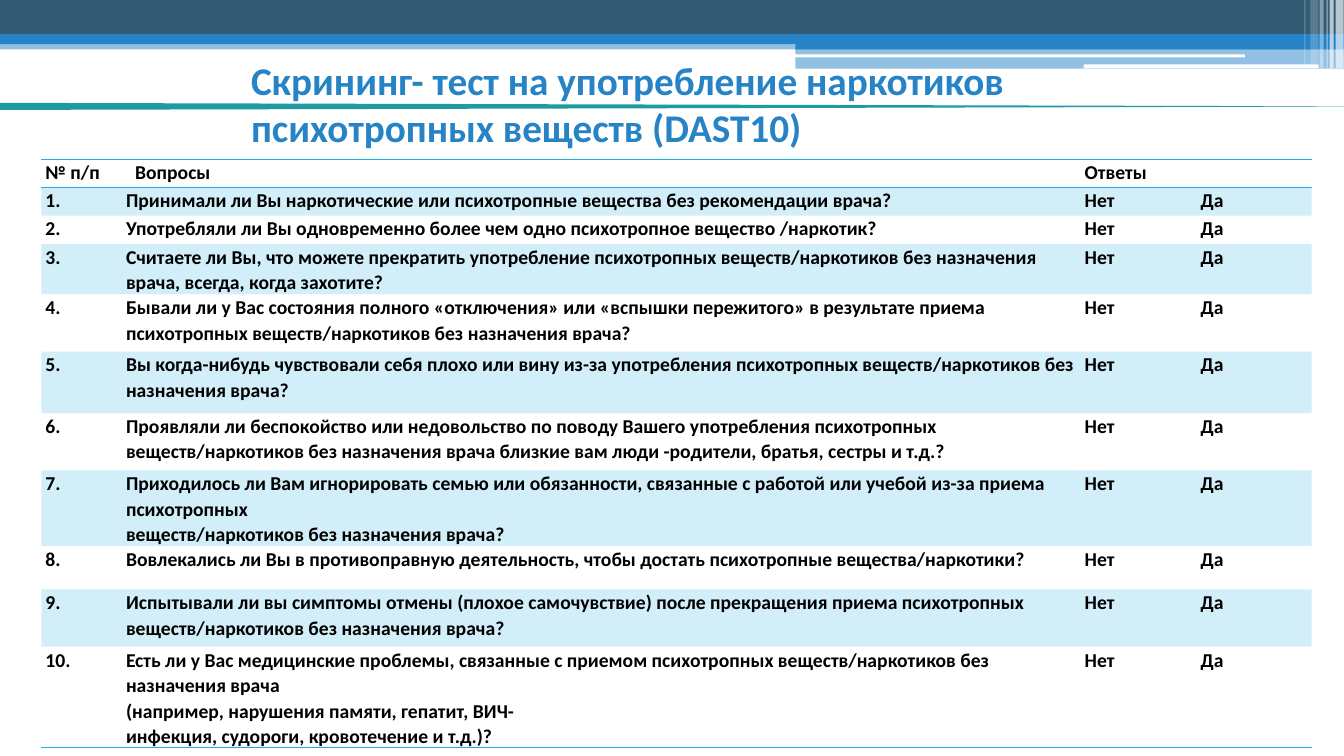
import pptx
import pptx.util
import pptx.dml.color
import pptx.enum.shapes
import pptx.enum.text
import pptx.oxml.ns
import lxml.etree

RGBColor = pptx.dml.color.RGBColor
SHAPE = pptx.enum.shapes.MSO_SHAPE
BLUE = RGBColor(0x26, 0x83, 0xC6)
SLATE = RGBColor(0x33, 0x5B, 0x74)
TEAL = RGBColor(0x1D, 0x9B, 0xA1)
CYAN = RGBColor(0x1C, 0xAD, 0xE4)
WHITE = RGBColor(0xFF, 0xFF, 0xFF)
BLACK = RGBColor(0, 0, 0)
NO_TABLE_STYLE = "{2D5ABB26-0587-4C30-8999-92F81FD0307C}"

QUESTIONS = [
    "Принимали ли Вы наркотические или психотропные вещества без рекомендации врача?",
    "Употребляли ли Вы одновременно более чем одно психотропное вещество /наркотик?",
    "Считаете ли Вы, что можете прекратить употребление психотропных веществ/наркотиков "
    "без назначения врача, всегда, когда захотите?",
    "Бывали ли у Вас состояния полного «отключения» или «вспышки пережитого» в результате "
    "приема психотропных веществ/наркотиков без назначения врача?",
    "Вы когда-нибудь чувствовали себя плохо или вину из-за употребления психотропных "
    "веществ/наркотиков без назначения врача?",
    "Проявляли ли беспокойство или недовольство по поводу Вашего употребления психотропных "
    "веществ/наркотиков без назначения врача близкие вам люди -родители, братья, сестры и т.д.?",
    "Приходилось ли Вам игнорировать семью или обязанности, связанные с работой или учебой "
    "из-за приема психотропных\nвеществ/наркотиков без назначения врача?",
    "Вовлекались ли Вы в противоправную деятельность, чтобы достать психотропные "
    "вещества/наркотики?",
    "Испытывали ли вы симптомы отмены (плохое самочувствие) после прекращения приема "
    "психотропных веществ/наркотиков без назначения врача?",
    "Есть ли у Вас медицинские проблемы, связанные с приемом психотропных "
    "веществ/наркотиков без назначения врача\n(например, нарушения памяти, гепатит, ВИЧ-\n"
    "инфекция, судороги, кровотечение и т.д.)?",
]
# Lengths below are percentages of the slide's width (x) and height (y).
COLUMNS = [6, 71.33, 8.63, 8.55]
ROWS = [3.73, 3.73, 3.73, 5.73, 7.6, 8.13, 7.6, 7.6, 5.73, 7.6, 9.47]

# left, top, width, height, colour, opacity
BANDS = [
    (0, 5.33, 100, 1.2, BLUE, 50),
    (0, 0, 100, 4.53, SLATE, 100),
    (0, 4.53, 100, 1.33, BLUE, 100),
    (59.18, 5.2, 40.82, 1.33, BLUE, 100),
    (59.18, 6.4, 40.82, 2.67, BLUE, 50),
]
# left, top, width, height
SLITS = [(59.1, 7.2, 33.53, 0.4), (80.63, 8.53, 17.48, 0.53)]
# left, width, height, opacity
STRIPES = [
    (99.38, 0.6, 9.07, 65),
    (98.93, 0.3, 9.07, 65),
    (98.7, 0.08, 9.07, 60),
    (98.18, 0.3, 9.07, 40),
    (97.5, 0.6, 8.53, 20),
    (97.05, 0.08, 8.53, 30),
]


def write(tf, text, size=14, color=BLACK, bold=True, spacing=1.0):
    """Fill a text frame, one paragraph per line of text."""
    for i, line in enumerate(text.split("\n")):
        p = tf.paragraphs[0] if i == 0 else tf.add_paragraph()
        p.line_spacing = spacing
        r = p.add_run()
        r.text = line
        r.font.name = "Calibri"
        r.font.size = pptx.util.Pt(size)
        r.font.bold = bold
        r.font.color.rgb = color


def paint(fill, color, opacity=100):
    fill.solid()
    fill.fore_color.rgb = color
    if opacity < 100:
        clr = fill._xPr.find(".//" + pptx.oxml.ns.qn("a:srgbClr"))
        alpha = lxml.etree.SubElement(clr, pptx.oxml.ns.qn("a:alpha"))
        alpha.set("val", str(opacity * 1000))


def border(cell, side, color, width=1):
    """Draw one cell edge; side is T or B, and B must come before T."""
    ln = lxml.etree.Element(pptx.oxml.ns.qn("a:ln" + side), w=str(pptx.util.Pt(width)))
    fill = lxml.etree.SubElement(ln, pptx.oxml.ns.qn("a:solidFill"))
    lxml.etree.SubElement(fill, pptx.oxml.ns.qn("a:srgbClr"), val=str(color))
    cell._tc.get_or_add_tcPr().insert(0, ln)


class Deck:
    def __init__(self, width, height):
        self.prs = pptx.Presentation()
        self.prs.slide_width = pptx.util.Inches(width)
        self.prs.slide_height = pptx.util.Inches(height)
        self.s = self.prs.slides.add_slide(self.prs.slide_layouts[6])

    def x(self, share):
        return round(self.prs.slide_width * share / 100)

    def y(self, share):
        return round(self.prs.slide_height * share / 100)

    def box(self, left, top, width, height):
        return self.x(left), self.y(top), self.x(width), self.y(height)

    def shape(self, kind, place, color, opacity=100, rotation=0, adjust=None):
        sp = self.s.shapes.add_shape(kind, *self.box(*place))
        sp.shadow.inherit = False
        sp.line.fill.background()
        sp.rotation = rotation
        if adjust is not None:
            sp.adjustments[0] = adjust
        paint(sp.fill, color, opacity)

    def title(self, text, place):
        tf = self.s.shapes.add_textbox(*self.box(*place)).text_frame
        tf.word_wrap = True
        tf.vertical_anchor = pptx.enum.text.MSO_ANCHOR.MIDDLE
        tf.margin_left = tf.margin_right = tf.margin_top = tf.margin_bottom = 0
        write(tf, text, size=28, color=BLUE)

    def cell(self, cell, text, banded):
        cell.margin_left = cell.margin_right = pptx.util.Inches(0.04)
        cell.margin_top = cell.margin_bottom = 0
        if banded:
            paint(cell.fill, CYAN, 20)
        else:
            cell.fill.background()
        write(cell.text_frame, text, spacing=1.07)

    def table(self, rows, left, top):
        place = self.box(left, top, sum(COLUMNS), sum(ROWS))
        table = self.s.shapes.add_table(len(ROWS), len(COLUMNS), *place).table
        table.first_row = table.horz_banding = False
        table._tbl.tblPr.find(pptx.oxml.ns.qn("a:tableStyleId")).text = NO_TABLE_STYLE
        for column, share in zip(table.columns, COLUMNS):
            column.width = self.x(share)
        for row, share in zip(table.rows, ROWS):
            row.height = self.y(share)
        for i, texts in enumerate(rows):
            for j, text in enumerate(texts):
                cell = table.cell(i, j)
                self.cell(cell, text, banded=i % 2 == 1)
                if i in (0, len(rows) - 1):
                    border(cell, "B", CYAN)
                if i == 0:
                    border(cell, "T", CYAN)
        table.cell(0, 1).margin_left = pptx.util.Inches(0.13)
        table.cell(0, 2).merge(table.cell(0, 3))


def main():
    deck = Deck(13.33, 7.5)
    for *place, color, opacity in BANDS:
        deck.shape(SHAPE.RECTANGLE, place, color, opacity)
    for place in SLITS:
        deck.shape(SHAPE.ROUNDED_RECTANGLE, place, WHITE, adjust=0.17)
    for left, width, height, opacity in STRIPES:
        deck.shape(SHAPE.RECTANGLE, (left, 0, width, height), WHITE, opacity)
    deck.shape(SHAPE.ISOSCELES_TRIANGLE, (51.38, -77.73, 0.53, 183.6), TEAL,
               rotation=90, adjust=0.51)
    deck.title("Скрининг- тест на употребление наркотиков психотропных веществ (DAST10)",
               (18.68, 7.87, 71.93, 11.6))
    header = ["№ п/п", "Вопросы", "Ответы", ""]
    answers = [[f"{n}.", question, "Нет", "Да"] for n, question in enumerate(QUESTIONS, 1)]
    deck.table([header] + answers, 3.08, 21.07)
    deck.prs.save("out.pptx")


if __name__ == "__main__":
    main()
